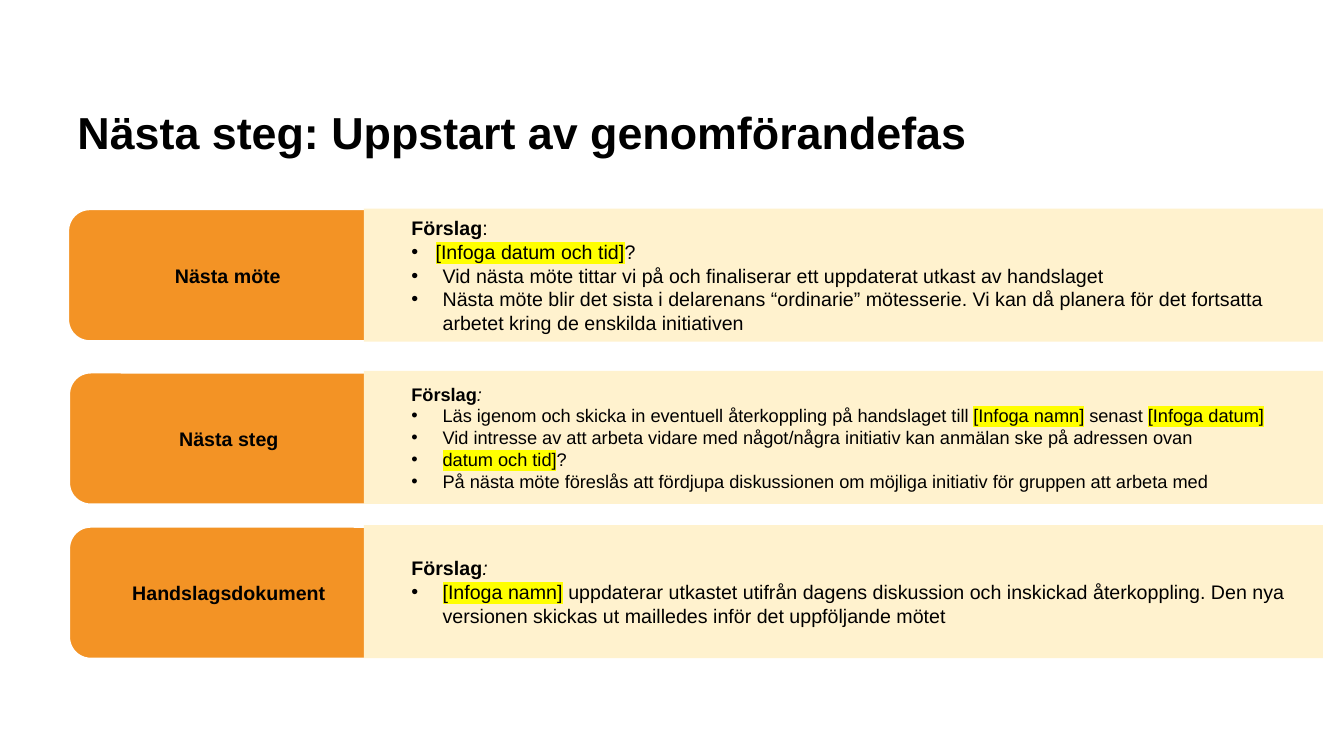
from lxml import etree
from pptx import Presentation
from pptx.dml.color import RGBColor
from pptx.enum.shapes import MSO_SHAPE
from pptx.enum.text import MSO_ANCHOR, PP_ALIGN
from pptx.oxml.ns import qn
from pptx.util import Inches, Pt

ROUNDED, RECTANGLE = MSO_SHAPE.ROUNDED_RECTANGLE, MSO_SHAPE.RECTANGLE
MIDDLE, BOTTOM = MSO_ANCHOR.MIDDLE, MSO_ANCHOR.BOTTOM
LEFT, CENTER = PP_ALIGN.LEFT, PP_ALIGN.CENTER

FONT = "Arial"
BLACK, WHITE, ORANGE, CREAM, YELLOW = "000000", "FFFFFF", "F39325", "FFF2CE", "FFFF00"

TITLE = "Nästa steg: Uppstart av genomförandefas"
HEADING = "Förslag"
# Each bullet is a list of text pieces; a piece in square brackets or a tuple is highlighted.
ROWS = [
    {"label": "Nästa möte", "label_at": (0.67, 2.07), "panel_top": 2.07,
     "size": 14, "italic_colon": False, "first_indent": 0.24,
     "bullets": [
         [("[Infoga datum och tid]",), "?"],
         ["Vid nästa möte tittar vi på och finaliserar ett uppdaterat utkast av handslaget"],
         ["Nästa möte blir det sista i delarenans “ordinarie” mötesserie. Vi kan då planera "
          "för det fortsatta arbetet kring de enskilda initiativen"],
     ]},
    {"label": "Nästa steg", "label_at": (0.68, 3.69), "panel_top": 3.68,
     "size": 13, "italic_colon": True, "first_indent": 0.31,
     "bullets": [
         ["Läs igenom och skicka in eventuell återkoppling på handslaget till ",
          ("[Infoga namn]",), " senast ", ("[Infoga datum]",)],
         ["Vid intresse av att arbeta vidare med något/några initiativ kan anmälan ske "
          "på adressen ovan"],
         [("datum och tid]",), "?"],
         ["På nästa möte föreslås att fördjupa diskussionen om möjliga initiativ för "
          "gruppen att arbeta med"],
     ]},
    {"label": "Handslagsdokument", "label_at": (0.68, 5.22), "panel_top": 5.21,
     "size": 14, "italic_colon": True, "first_indent": 0.31,
     "bullets": [
         [("[Infoga namn]",), " uppdaterar utkastet utifrån dagens diskussion och inskickad "
          "återkoppling. Den nya versionen skickas ut mailledes inför det uppföljande mötet"],
     ]},
]
LABEL_WIDTH, PANEL_LEFT, PANEL_WIDTH, ROW_HEIGHT = 3.18, 3.61, 9.51, 1.32
PANEL_INSET = 0.47
BULLET_INDENT = 0.31


def color(value):
    return RGBColor.from_string(value)


def set_font(paragraph, size, bold=None):
    font = paragraph.font
    font.name, font.size, font.bold = FONT, Pt(size), bold
    font.color.rgb = color(BLACK)


def add_block(slide, kind, left, top, width, fill):
    shape = slide.shapes.add_shape(
        kind, Inches(left), Inches(top), Inches(width), Inches(ROW_HEIGHT))
    shape.shadow.inherit = False
    shape.fill.solid()
    shape.fill.fore_color.rgb = color(fill)
    shape.line.fill.background()
    shape.text_frame.word_wrap = True
    shape.text_frame.vertical_anchor = MIDDLE
    return shape


def add_bullet(paragraph, indent):
    properties = paragraph._p.get_or_add_pPr()
    properties.set("marL", str(Inches(indent)))
    properties.set("indent", str(-Inches(indent)))
    bullet_color = etree.SubElement(properties, qn("a:buClr"))
    etree.SubElement(bullet_color, qn("a:srgbClr"), val=BLACK)
    etree.SubElement(properties, qn("a:buFont"), typeface=FONT)
    etree.SubElement(properties, qn("a:buChar"), char="•")


def add_run(paragraph, text):
    run = paragraph.add_run()
    run.text = text
    return run


def highlight(run):
    highlight_element = etree.SubElement(run._r.get_or_add_rPr(), qn("a:highlight"))
    etree.SubElement(highlight_element, qn("a:srgbClr"), val=YELLOW)


def add_label(slide, row):
    shape = add_block(slide, ROUNDED, *row["label_at"], LABEL_WIDTH, ORANGE)
    shape.line.color.rgb = color(WHITE)
    shape.line.width = Pt(2.25)
    paragraph = shape.text_frame.paragraphs[0]
    paragraph.text = row["label"]
    paragraph.alignment = CENTER
    set_font(paragraph, 14, bold=True)


def add_panel(slide, row):
    shape = add_block(slide, RECTANGLE, PANEL_LEFT, row["panel_top"], PANEL_WIDTH, CREAM)
    frame = shape.text_frame
    frame.margin_left = Inches(PANEL_INSET)
    heading = frame.paragraphs[0]
    heading.alignment = LEFT
    set_font(heading, row["size"])
    add_run(heading, HEADING).font.bold = True
    add_run(heading, ":").font.italic = row["italic_colon"]

    for index, pieces in enumerate(row["bullets"]):
        paragraph = frame.add_paragraph()
        paragraph.alignment = LEFT
        add_bullet(paragraph, BULLET_INDENT if index else row["first_indent"])
        set_font(paragraph, row["size"])
        for piece in pieces:
            if isinstance(piece, tuple):
                highlight(add_run(paragraph, piece[0]))
            else:
                add_run(paragraph, piece)


def add_title(slide):
    box = slide.shapes.add_textbox(Inches(0.67), Inches(0.85), Inches(12.1), Inches(0.78))
    box.text_frame.word_wrap = True
    box.text_frame.vertical_anchor = BOTTOM
    paragraph = box.text_frame.paragraphs[0]
    paragraph.text = TITLE
    paragraph.line_spacing = 0.95
    set_font(paragraph, 32, bold=True)


def main():
    presentation = Presentation()
    presentation.slide_width, presentation.slide_height = Inches(13.33), Inches(7.5)
    slide = presentation.slides.add_slide(presentation.slide_layouts[6])
    add_title(slide)
    for row in ROWS:
        add_label(slide, row)
        add_panel(slide, row)
    presentation.save("out.pptx")


if __name__ == "__main__":
    main()
